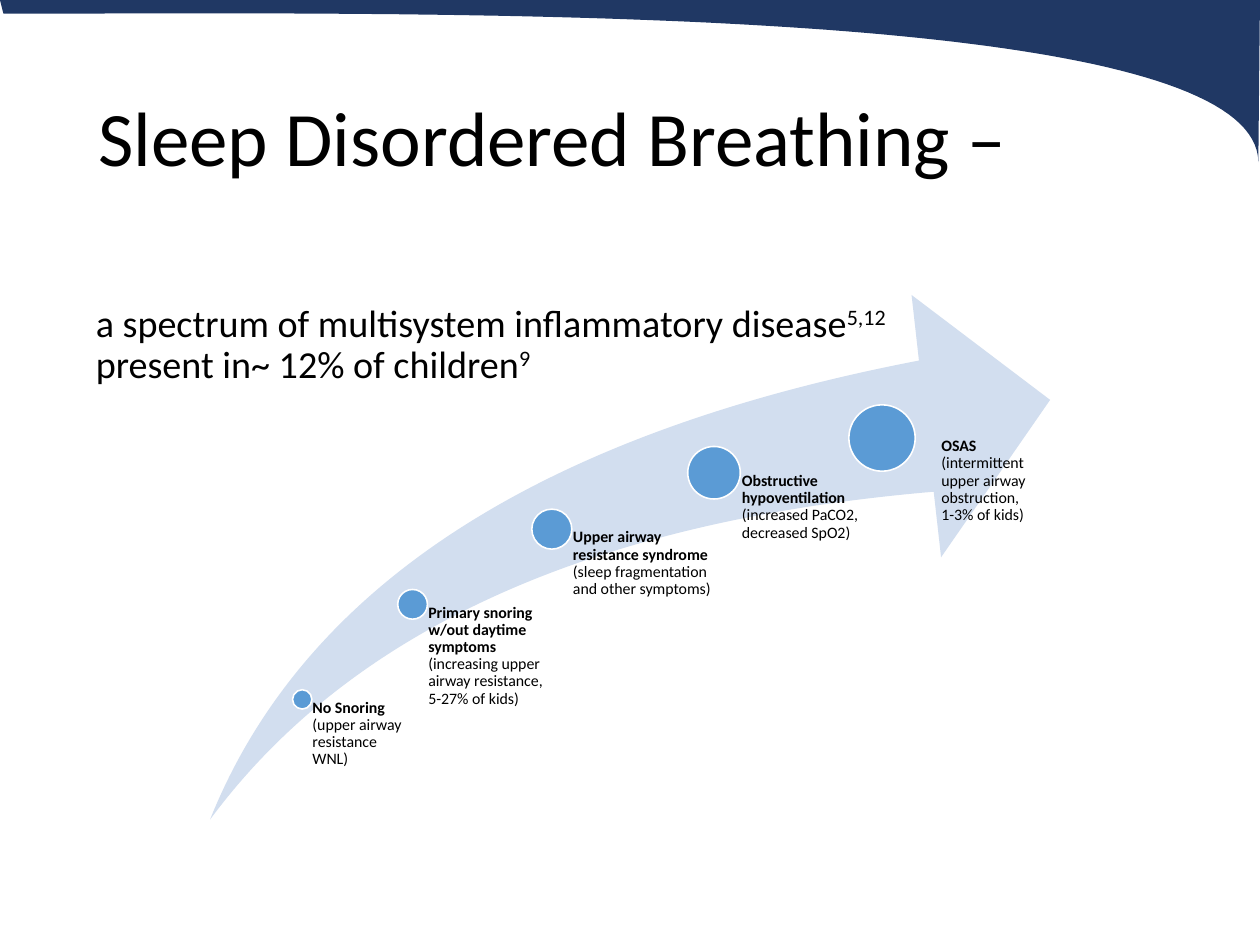
"""Build the slide on the spectrum of sleep disordered breathing."""
from pptx import Presentation
from pptx.dml.color import RGBColor
from pptx.enum.shapes import MSO_SHAPE
from pptx.enum.text import MSO_ANCHOR, PP_ALIGN
from pptx.util import Pt

COLORS = {"band": "203864", "arrow": "D2DEEF", "dot": "5B9BD5",
          "outline": "FFFFFF", "text": "000000"}
FONT = "Calibri"
SLIDE_WIDTH, SLIDE_HEIGHT = 793.7, 595.28
TITLE = "Sleep Disordered Breathing –"
SUMMARY = [("a spectrum of multisystem inflammatory disease", "5,12"),
           ("present in~ 12% of children", "9")]
BAND_CURVE = [(792.7, 102.2), (792, 0), (266.4, 8.6), (2.2, 8.6)]
CURVE_STEPS = 80
INSET_RATIO = 0.53
LABELS_BOTTOM = 519

# name, detail, center x, center y, diameter, label width, label shift
STAGES = [
    ("No Snoring", "(upper airway resistance WNL)", 190.4, 440.6, 12.2, 69, 0),
    ("Primary snoring w/out daytime symptoms",
     "(increasing upper airway resistance, 5-27% of kids)", 259.9, 380.7, 18.7, 88, 0),
    ("Upper airway resistance syndrome",
     "(sleep fragmentation and other symptoms)", 347.6, 333.3, 25.2, 102, 0),
    ("Obstructive hypoventilation",
     "(increased PaCO2, decreased SpO2)", 449.8, 297.8, 33.1, 106, 0),
    ("OSAS", "(intermittent upper airway obstruction, 1-3% of kids)",
     555.6, 275.9, 41.8, 76, 15.2),
]


def color(name):
    return RGBColor.from_string(COLORS[name])


def paint(shape, fill, line=None):
    shape.shadow.inherit = False
    shape.fill.solid()
    shape.fill.fore_color.rgb = color(fill)
    if line:
        shape.line.color.rgb = color(line)
        shape.line.width = Pt(1)
    else:
        shape.line.fill.background()


def format_paragraph(paragraph, size):
    paragraph.alignment = PP_ALIGN.LEFT
    paragraph.line_spacing = 0.9
    paragraph.font.name = FONT
    paragraph.font.size = Pt(size)
    paragraph.font.color.rgb = color("text")


def place(shape, left, top, width, height):
    shape.left, shape.top, shape.width, shape.height = map(Pt, (left, top, width, height))


def add_text_box(slide, left, top, width, height):
    box = slide.shapes.add_textbox(Pt(left), Pt(top), Pt(width), Pt(height))
    box.text_frame.word_wrap = True
    return box.text_frame


def curve_point(t):
    weights = ((1 - t) ** 3, 3 * t * (1 - t) ** 2, 3 * t * t * (1 - t), t ** 3)
    return tuple(Pt(sum(w * point[axis] for w, point in zip(weights, BAND_CURVE)))
                 for axis in (0, 1))


def add_band(slide):
    builder = slide.shapes.build_freeform(0, 0)
    edge = [curve_point(step / CURVE_STEPS) for step in range(CURVE_STEPS + 1)]
    builder.add_line_segments([(Pt(SLIDE_WIDTH), 0)] + edge, close=True)
    paint(builder.convert_to_shape(), "band")


def add_title(slide):
    title = slide.shapes.title
    place(title, 54.7, 31.7, 684.7, 115.2)
    title.text_frame.text = TITLE
    title.text_frame.vertical_anchor = MSO_ANCHOR.MIDDLE
    format_paragraph(title.text_frame.paragraphs[0], 48.5)


def add_summary(slide):
    paragraph = add_text_box(slide, 53.3, 188, 684.7, 60).paragraphs[0]
    for index, (words, reference) in enumerate(SUMMARY):
        if index:
            paragraph.add_line_break()
        paragraph.add_run().text = words
        run = paragraph.add_run()
        run.text = reference
        run.font._element.set("baseline", "30000")
    format_paragraph(paragraph, 24)


def add_stage(slide, name, detail, x, y, diameter, width, shift):
    dot = slide.shapes.add_shape(MSO_SHAPE.OVAL, Pt(x - diameter / 2),
                                 Pt(y - diameter / 2), Pt(diameter), Pt(diameter))
    paint(dot, "dot", "outline")
    frame = add_text_box(slide, x + shift, y, width, LABELS_BOTTOM - y)
    frame.margin_left = Pt(diameter * INSET_RATIO)
    frame.margin_top = frame.margin_right = frame.margin_bottom = 0
    paragraph = frame.paragraphs[0]
    for text, bold in ((name + " ", True), (detail, False)):
        run = paragraph.add_run()
        run.text = text
        run.font.bold = bold
    format_paragraph(paragraph, 10)


def main():
    presentation = Presentation()
    presentation.slide_width, presentation.slide_height = Pt(SLIDE_WIDTH), Pt(SLIDE_HEIGHT)
    slide = presentation.slides.add_slide(presentation.slide_layouts[5])
    add_band(slide)
    add_title(slide)
    add_summary(slide)
    arrow = slide.shapes.add_shape(MSO_SHAPE.SWOOSH_ARROW, Pt(132.3), Pt(185.8),
                                   Pt(529.2), Pt(330.5))
    arrow.adjustments[0] = arrow.adjustments[1] = 0.25
    paint(arrow, "arrow")
    for stage in STAGES:
        add_stage(slide, *stage)
    presentation.save("out.pptx")


if __name__ == "__main__":
    main()
